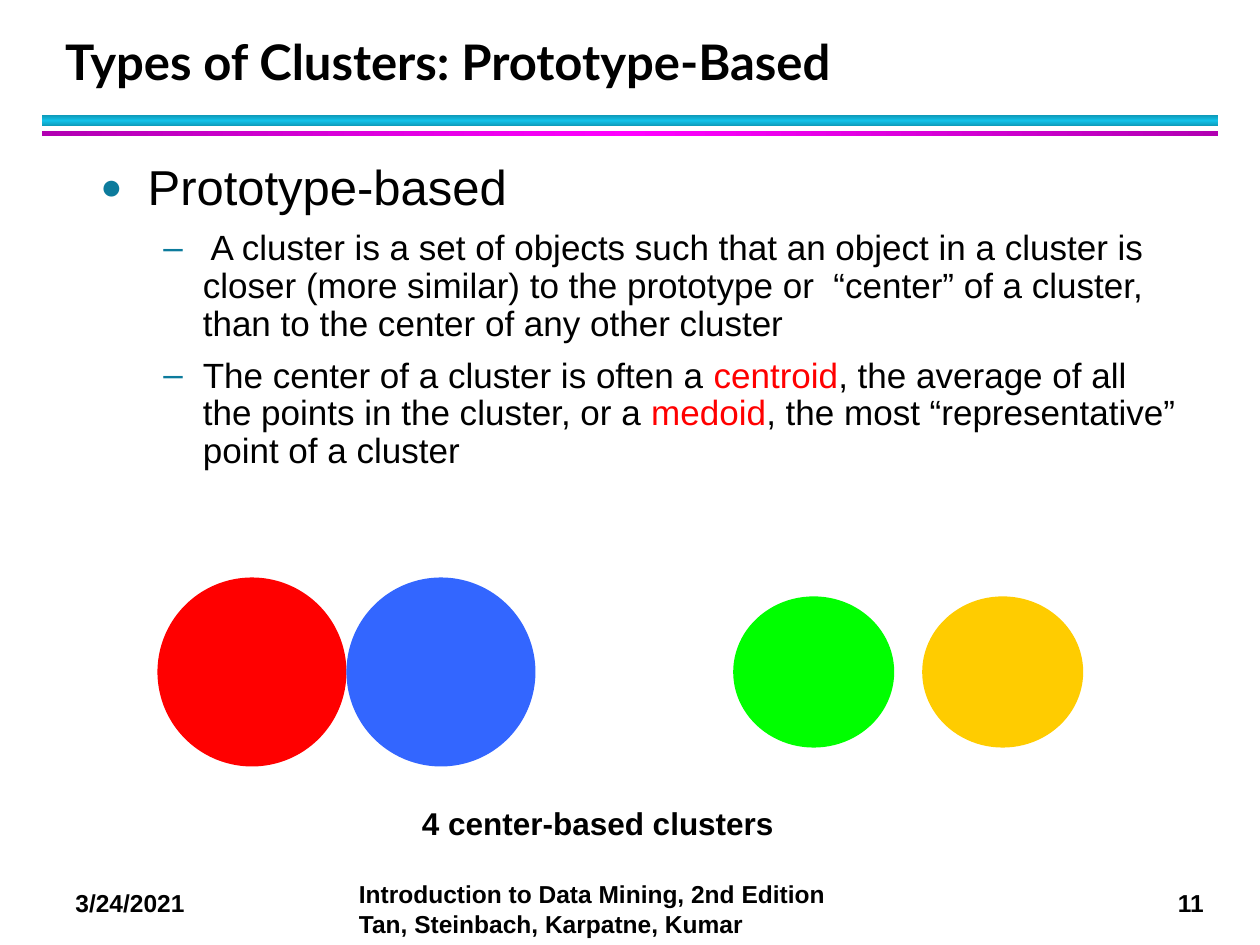
"""Build a slide on prototype-based clusters."""
from copy import deepcopy

from lxml import etree
from pptx import Presentation
from pptx.dml.color import RGBColor
from pptx.enum.shapes import MSO_SHAPE
from pptx.enum.text import MSO_ANCHOR, MSO_AUTO_SIZE, PP_ALIGN
from pptx.oxml.ns import qn
from pptx.util import Pt

RECTANGLE, OVAL = MSO_SHAPE.RECTANGLE, MSO_SHAPE.OVAL
LEFT, TOP, BOTTOM = PP_ALIGN.LEFT, MSO_ANCHOR.TOP, MSO_ANCHOR.BOTTOM
FIXED = MSO_AUTO_SIZE.NONE

BLACK = RGBColor(0, 0, 0)
RED = RGBColor(0xFF, 0, 0)
BLUE = RGBColor(0x33, 0x66, 0xFF)
GREEN = RGBColor(0, 0xFF, 0)
GOLD = RGBColor(0xFF, 0xCC, 0)
TEAL = RGBColor(0x0C, 0x7B, 0x9C)
CYAN_EDGE, CYAN = RGBColor(0x0E, 0x9B, 0xBA), RGBColor(0x12, 0xC2, 0xE9)
PURPLE, MAGENTA = RGBColor(0xB2, 0, 0xB2), RGBColor(0xFF, 0, 0xFF)

TITLE = "Types of Clusters: Prototype-Based"
BODY = [
    (0, [("Prototype-based", BLACK)]),
    (1, [(" A cluster is a set of objects such that an object in a cluster is "
          "closer (more similar) to the prototype or  “center” of a cluster, "
          "than to the center of any other cluster", BLACK)]),
    (1, [("The center of a cluster is often a ", BLACK),
         ("centroid", RED),
         (", the average of all the points in the cluster, or a ", BLACK),
         ("medoid", RED),
         (", the most “representative” point of a cluster", BLACK)]),
]
LEVELS = [
    {"size": 28, "margin": 27, "hang": 27, "bullet": "●", "scale": 75},
    {"size": 20, "margin": 58.5, "hang": 22.5, "bullet": "–", "scale": 100},
]
RULES = [
    (66, 6, CYAN_EDGE, CYAN, 90),
    (75, 2.8, PURPLE, MAGENTA, 0),
]
CLUSTER_MIDDLE = 384
CLUSTERS = [
    (144, 108, 108, RED),
    (252, 108, 108, BLUE),
    (465, 92, 86.4, GREEN),
    (573, 92, 86.4, GOLD),
]
LABELS = [
    ("3/24/2021", (36, 504, 96, 24.5), 14, True),
    ("11", (666, 504, 32, 24.5), 14, False),
    ("Introduction to Data Mining, 2nd Edition\vTan, Steinbach, Karpatne, Kumar",
     (198, 499, 294, 41), 14, True),
    ("4 center-based clusters", (234, 456, 252, 29), 18, True),
]


def place(shape, left, top, width, height):
    shape.left, shape.top = Pt(left), Pt(top)
    shape.width, shape.height = Pt(width), Pt(height)


def set_font(font, name, size, bold=False):
    font.name, font.size, font.bold = name, Pt(size), bold
    font.color.rgb = BLACK


def add_plain_shape(page, kind, *bounds):
    shape = page.shapes.add_shape(kind, *map(Pt, bounds))
    shape.shadow.inherit = False
    shape.line.fill.background()
    return shape


def add_rule(page, top, height, edge, middle, angle):
    rule = add_plain_shape(page, RECTANGLE, 24, top, 672, height)
    rule.fill.gradient()
    rule.fill.gradient_angle = angle
    stop_list = next(rule._element.iter(qn("a:gsLst")))
    stop_list.append(deepcopy(stop_list[0]))
    for stop, color, position in zip(
            rule.fill.gradient_stops, (edge, middle, edge), (0, 0.5, 1)):
        stop.color.rgb, stop.position = color, position


def add_cluster(page, center, width, height, color):
    left, top = center - width / 2, CLUSTER_MIDDLE - height / 2
    cluster = add_plain_shape(page, OVAL, left, top, width, height)
    cluster.fill.solid()
    cluster.fill.fore_color.rgb = color


def add_bullet(para, level):
    properties = para._p.get_or_add_pPr()
    properties.set("marL", str(Pt(level["margin"])))
    properties.set("indent", str(-Pt(level["hang"])))
    color = etree.SubElement(properties, qn("a:buClr"))
    etree.SubElement(color, qn("a:srgbClr"), val=str(TEAL))
    etree.SubElement(properties, qn("a:buSzPct"), val=str(level["scale"] * 1000))
    etree.SubElement(properties, qn("a:buFont"), typeface="Arial")
    etree.SubElement(properties, qn("a:buChar"), char=level["bullet"])


def fill_title(title):
    place(title, 30, 12.5, 652, 43)
    frame = title.text_frame
    frame.text = TITLE
    frame.auto_size, frame.vertical_anchor = FIXED, BOTTOM
    para = frame.paragraphs[0]
    para.alignment, para.line_spacing = LEFT, Pt(36)
    set_font(para.font, "Lato", 28, True)


def fill_body(body):
    place(body, 50.2, 89.8, 630, 402.5)
    frame = body.text_frame
    frame.auto_size, frame.vertical_anchor = FIXED, TOP
    for index, (depth, spans) in enumerate(BODY):
        para = frame.add_paragraph() if index else frame.paragraphs[0]
        level = LEVELS[depth]
        para.level, para.line_spacing = depth, 0.9
        para.space_before, para.space_after = Pt(level["size"] * 0.2), Pt(4)
        add_bullet(para, level)
        set_font(para.font, "Arial", level["size"])
        for text, color in spans:
            span = para.add_run()
            span.text = text
            if color != BLACK:
                span.font.color.rgb = color


def add_label(page, text, bounds, size, wrap):
    frame = page.shapes.add_textbox(*map(Pt, bounds)).text_frame
    frame.text, frame.word_wrap = text, wrap
    set_font(frame.paragraphs[0].font, "Arial", size, True)


def main():
    deck = Presentation()
    deck.slide_width, deck.slide_height = Pt(720), Pt(540)
    page = deck.slides.add_slide(deck.slide_layouts[1])
    for rule in RULES:
        add_rule(page, *rule)
    fill_title(page.shapes.title)
    fill_body(page.placeholders[1])
    for cluster in CLUSTERS:
        add_cluster(page, *cluster)
    for label in LABELS:
        add_label(page, *label)
    deck.save("out.pptx")


if __name__ == "__main__":
    main()
